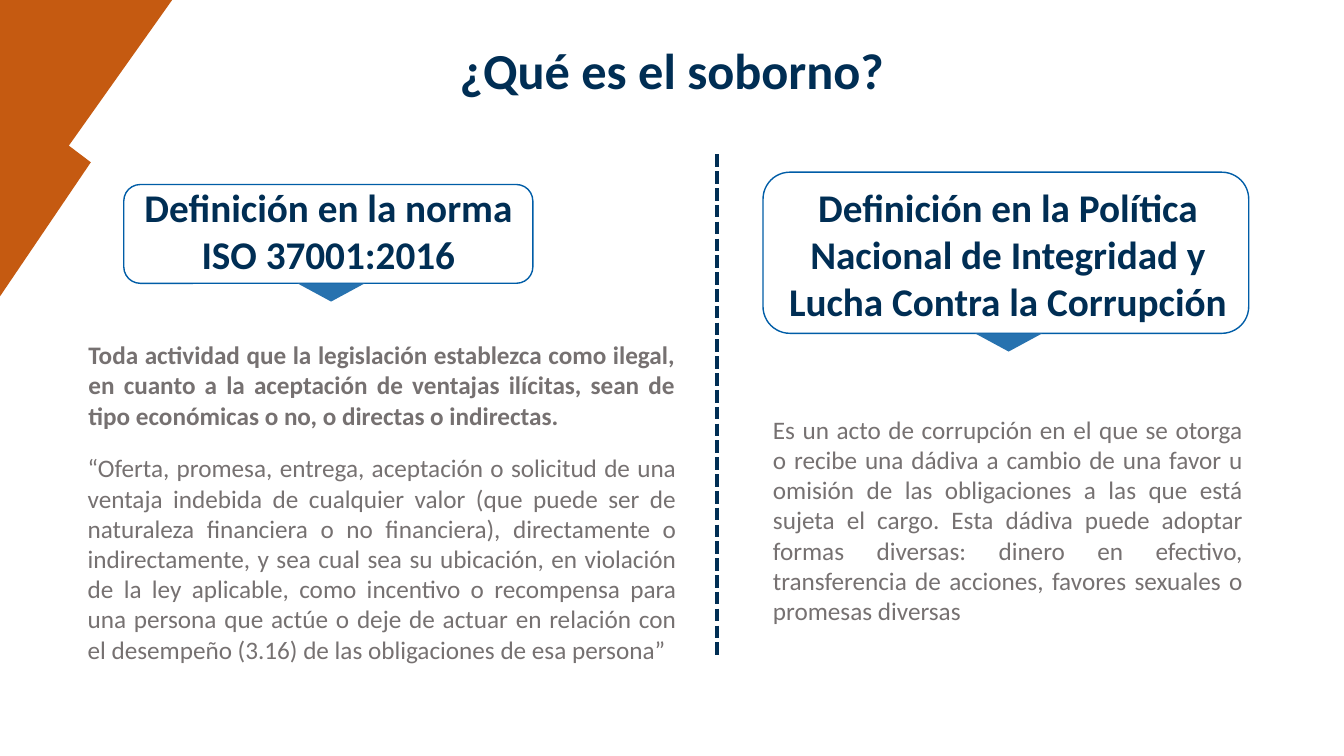
from dataclasses import dataclass

from lxml.etree import SubElement
from pptx import Presentation
from pptx.dml.color import RGBColor
from pptx.enum.dml import MSO_LINE
from pptx.enum.shapes import MSO_CONNECTOR, MSO_SHAPE
from pptx.enum.text import MSO_ANCHOR, PP_ALIGN
from pptx.oxml.ns import qn
from pptx.shapes.autoshape import Shape
from pptx.slide import Slide
from pptx.text.text import TextFrame
from pptx.util import Cm, Pt


@dataclass(frozen=True)
class Theme:
    font: str = "Calibri"
    navy: RGBColor = RGBColor(0x00, 0x2E, 0x54)
    gray: RGBColor = RGBColor(0x76, 0x71, 0x71)
    rust: RGBColor = RGBColor(0xC5, 0x5A, 0x11)
    edge: RGBColor = RGBColor(0x00, 0x5D, 0xA7)
    blue: RGBColor = RGBColor(0x27, 0x72, 0xAF)
    title: int = 36
    head: int = 28
    body: int = 18


@dataclass(frozen=True)
class Box:
    left: float
    top: float
    width: float
    height: float

    def place(self) -> tuple[Cm, Cm, Cm, Cm]:
        return Cm(self.left), Cm(self.top), Cm(self.width), Cm(self.height)


@dataclass(frozen=True)
class Label:
    box: Box
    text: str
    size: int
    color: RGBColor
    bold: bool
    align: PP_ALIGN


THEME = Theme()
TIP_WIDTH, TIP_HEIGHT, TIP_SHIFT = 1.7, 0.46, 0.07

WEDGES = [
    [(0, 2.36), (2.29, 4.09), (0, 7.47)],
    [(1.24, 4.37), (0, 3.45), (0, 0), (4.34, 0)],
]

FRAMES = [Box(3.12, 4.65, 10.31, 2.49), Box(19.23, 4.34, 12.24, 4.06)]


def head(box: Box, text: str) -> Label:
    return Label(box, text, THEME.head, THEME.navy, True, PP_ALIGN.CENTER)


def body(box: Box, text: str, bold: bool = False) -> Label:
    return Label(box, text, THEME.body, THEME.gray, bold, PP_ALIGN.JUSTIFY)


TITLE = Label(Box(0, 0, 33.87, 3.68), "¿Qué es el soborno?",
              THEME.title, THEME.navy, True, PP_ALIGN.CENTER)

LABELS = [
    head(Box(3.12, 4.5, 10.31, 2.64), "Definición en la norma ISO 37001:2016"),
    head(Box(19.28, 4.5, 12.24, 3.84),
         "Definición en la Política Nacional de Integridad y "
         "Lucha Contra la Corrupción"),
    body(Box(1.98, 8.43, 15.29, 2.57),
         "Toda actividad que la legislación establezca como ilegal, en cuanto "
         "a la aceptación de ventajas ilícitas, sean de tipo económicas o no, "
         "o directas o indirectas.", bold=True),
    body(Box(1.96, 11.28, 15.34, 5.64),
         "“Oferta, promesa, entrega, aceptación o solicitud de una ventaja "
         "indebida de cualquier valor (que puede ser de naturaleza financiera "
         "o no financiera), directamente o indirectamente, y sea cual sea su "
         "ubicación, en violación de la ley aplicable, como incentivo o "
         "recompensa para una persona que actúe o deje de actuar en relación "
         "con el desempeño (3.16) de las obligaciones de esa persona”"),
    body(Box(19.23, 10.31, 12.34, 5.64),
         "Es un acto de corrupción en el que se otorga o recibe una dádiva a "
         "cambio de una favor u omisión de las obligaciones a las que está "
         "sujeta el cargo. Esta dádiva puede adoptar formas diversas: dinero "
         "en efectivo, transferencia de acciones, favores sexuales o promesas "
         "diversas"),
]


def paint(shape: Shape, color: RGBColor) -> None:
    shape.shadow.inherit = False
    shape.fill.solid()
    shape.fill.fore_color.rgb = color
    shape.line.fill.background()


def write(frame: TextFrame, label: Label) -> None:
    frame.word_wrap = True
    frame.text = label.text
    para = frame.paragraphs[0]
    para.alignment = label.align
    para.font.name = THEME.font
    para.font.size = Pt(label.size)
    para.font.bold = label.bold
    para.font.color.rgb = label.color


def draw_wedge(slide: Slide, points: list[tuple[float, float]]) -> None:
    start, *rest = [(Cm(x), Cm(y)) for x, y in points]
    pen = slide.shapes.build_freeform(*start)
    pen.add_line_segments(rest, close=True)
    paint(pen.convert_to_shape(), THEME.rust)


def draw_title(slide: Slide) -> None:
    title = slide.shapes.title
    title.left, title.top, title.width, title.height = TITLE.box.place()
    write(title.text_frame, TITLE)
    title.text_frame.vertical_anchor = MSO_ANCHOR.MIDDLE
    title.text_frame.paragraphs[0].line_spacing = 0.9


def draw_label(slide: Slide, label: Label) -> None:
    write(slide.shapes.add_textbox(*label.box.place()).text_frame, label)


def draw_frame(slide: Slide, box: Box) -> None:
    frame = slide.shapes.add_shape(MSO_SHAPE.ROUNDED_RECTANGLE, *box.place())
    frame.shadow.inherit = False
    frame.fill.background()
    frame.line.color.rgb = THEME.edge
    frame.line.width = Pt(1)
    left = box.left + (box.width - TIP_WIDTH) / 2 + TIP_SHIFT
    tip = Box(left, box.top + box.height, TIP_WIDTH, TIP_HEIGHT)
    paint(slide.shapes.add_shape(MSO_SHAPE.FLOWCHART_MERGE, *tip.place()),
          THEME.blue)


def draw_split(slide: Slide) -> None:
    split = slide.shapes.add_connector(
        MSO_CONNECTOR.STRAIGHT, Cm(18.06), Cm(3.89), Cm(18.06), Cm(16.59))
    split.line.color.rgb = THEME.navy
    split.line.width = Pt(3)
    split.line.dash_style = MSO_LINE.SQUARE_DOT
    SubElement(split._element.spPr, qn("a:effectLst"))


def main() -> None:
    deck = Presentation()
    deck.slide_width, deck.slide_height = Cm(33.87), Cm(19.05)
    slide = deck.slides.add_slide(deck.slide_layouts.get_by_name("Title Only"))
    for points in WEDGES:
        draw_wedge(slide, points)
    draw_title(slide)
    draw_split(slide)
    for box in FRAMES:
        draw_frame(slide, box)
    for label in LABELS:
        draw_label(slide, label)
    deck.save("out.pptx")


if __name__ == "__main__":
    main()
